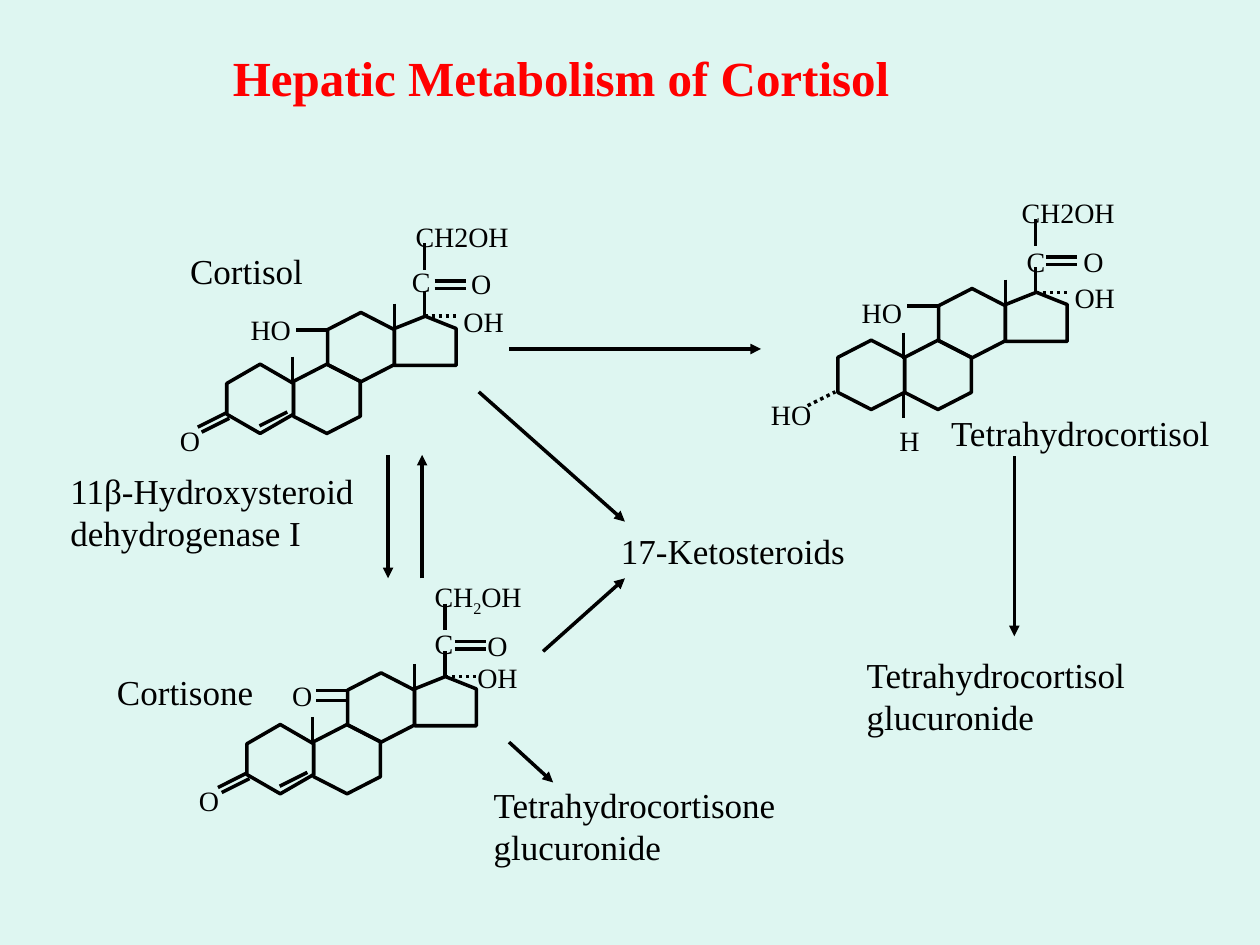
from dataclasses import dataclass

from lxml.etree import SubElement
from pptx import Presentation
from pptx.dml.color import RGBColor
from pptx.enum.dml import MSO_LINE
from pptx.enum.shapes import MSO_CONNECTOR, MSO_SHAPE
from pptx.enum.text import MSO_AUTO_SIZE
from pptx.oxml.ns import qn
from pptx.util import Cm, Pt


@dataclass(frozen=True)
class Theme:
    background: RGBColor = RGBColor(0xDE, 0xF6, 0xF1)
    title_color: RGBColor = RGBColor(0xFF, 0x00, 0x00)
    ink: RGBColor = RGBColor(0x00, 0x00, 0x00)
    font: str = "Times New Roman"
    title_size: int = 28
    name_size: int = 20
    atom_size: int = 16
    line_width: int = 2


def inch(value):
    return Cm(value * 2.54)


class Diagram:
    def __init__(self, slide, theme):
        self.s = slide
        self.theme = theme
        fill = slide.background.fill
        fill.solid()
        fill.fore_color.rgb = theme.background

    def text(self, paragraphs, x, y, w, h, size, color=None, bold=False, wrap=True):
        sp = self.s.shapes.add_textbox(inch(x), inch(y), inch(w), inch(h))
        tf = sp.text_frame
        tf.word_wrap = wrap
        tf.auto_size = MSO_AUTO_SIZE.SHAPE_TO_FIT_TEXT
        for i, runs in enumerate(paragraphs):
            p = tf.paragraphs[0] if i == 0 else tf.add_paragraph()
            for value, baseline in runs:
                r = p.add_run()
                r.text = value
                r.font.name = self.theme.font
                r.font.size = Pt(size)
                r.font.bold = bold
                r.font.color.rgb = color or self.theme.ink
                if baseline:
                    r.font._element.set("baseline", str(baseline))

    def title(self, value, x, y, w, h):
        self.text([[(value, 0)]], x, y, w, h, self.theme.title_size,
                  self.theme.title_color, True)

    def name(self, lines, x, y, w):
        h = 0.43 if w < 2.5 and len(lines) == 1 else 0.77
        self.text([[(line, 0)] for line in lines], x, y, w, h, self.theme.name_size)

    def atom(self, runs, x, y, w=0.25, wrap=True):
        self.text([runs], x, y, w, 0.37, self.theme.atom_size, wrap=wrap)

    def pen(self, sp):
        sp.line.color.rgb = self.theme.ink
        sp.line.width = Pt(self.theme.line_width)

    def line(self, x1, y1, x2, y2, dotted=False, arrow=False):
        sp = self.s.shapes.add_connector(MSO_CONNECTOR.STRAIGHT, inch(x1), inch(y1),
                                         inch(x2), inch(y2))
        self.pen(sp)
        if dotted:
            sp.line.dash_style = MSO_LINE.ROUND_DOT
        if arrow:
            SubElement(sp.line._get_or_add_ln(), qn("a:tailEnd"), type="triangle")
        SubElement(sp._element.spPr, qn("a:effectLst"))

    def ring(self, kind, x, y, w, h, adjust):
        sp = self.s.shapes.add_shape(kind, inch(x), inch(y), inch(w), inch(h))
        sp.rotation = 270
        sp.adjustments[0] = adjust
        sp.shadow.inherit = False
        sp.fill.background()
        self.pen(sp)

    def steroid(self, x, y, bonds, a_ring_adjust):
        for dx, dy, adjust in ((-0.78, -0.02, 0.257), (-1.05, 0.39, 0.257),
                               (-1.58, 0.39, a_ring_adjust)):
            self.ring(MSO_SHAPE.HEXAGON, x + dx, y + dy, 0.55, 0.53, adjust)
        self.ring(MSO_SHAPE.PENTAGON, x - 0.19, y - 0.05, 0.39, 0.49, 0.25)
        for x1, y1, x2, y2, dotted in CORE_BONDS + bonds:
            self.line(x + x1, y + y1, x + x2, y + y2, dotted)


CORE_BONDS = [
    (0, -0.58, 0, -0.37, False),
    (0, -0.2, 0, 0.01, False),
    (0, 0, 0.25, 0, True),
    (0.08, -0.28, 0.33, -0.28, False),
    (0.08, -0.22, 0.33, -0.22, False),
    (-0.24, -0.1, -0.24, 0.11, False),
    (-1.05, 0.32, -1.05, 0.53, False),
    (-1.02, 0.11, -0.77, 0.11, False),
]
ENONE_BONDS = [
    (-1.31, 0.87, -1.09, 0.76, False),
    (-1.8, 0.88, -1.58, 0.77, False),
    (-1.77, 0.92, -1.55, 0.81, False),
]
KETONE_BOND = [(-1.02, 0.19, -0.77, 0.19, False)]
REDUCED_BONDS = [
    (-1.81, 0.9, -1.59, 0.79, True),
    (-1.05, 0.79, -1.05, 1, False),
]
STEROIDS = [
    (3.37, 2.51, ENONE_BONDS, 0.289),
    (3.53, 5.37, ENONE_BONDS + KETONE_BOND, 0.289),
    (8.22, 2.32, REDUCED_BONDS, 0.257),
]
ATOMS = [
    ("O", 1.33, 3.31, 0.25), ("HO", 1.89, 2.43, 0.61), ("OH", 3.58, 2.37, 0.58),
    ("O", 3.64, 2.07, 0.25), ("C", 3.17, 2.05, 0.25), ("CH2OH", 3.2, 1.69, 1.19),
    ("O", 1.48, 6.17, 0.25), ("O", 2.22, 5.34, 0.61), ("OH", 3.69, 5.19, 0.58),
    ("O", 3.77, 4.94, 0.25), ("C", 3.35, 4.92, 0.25),
    ("HO", 6.02, 3.11, 0.61), ("HO", 6.74, 2.3, 0.61), ("H", 7.04, 3.31, 0.25),
    ("OH", 8.43, 2.18, 0.58), ("O", 8.5, 1.89, 0.25), ("C", 8.05, 1.89, 0.25),
]
NAMES = [
    (["Cortisol"], 1.41, 1.93, 1.45),
    (["Cortisone"], 0.83, 5.27, 1.45),
    (["17-Ketosteroids"], 4.83, 4.15, 2.28),
    (["Tetrahydrocortisol"], 7.45, 3.22, 2.47),
    (["Tetrahydrocortisone glucuronide"], 3.82, 6.17, 3.56),
    (["11β-Hydroxysteroid dehydrogenase I"], 0.46, 3.68, 2.79),
    (["Tetrahydrocortisol", "glucuronide"], 6.78, 5.14, 2.47),
]
REACTIONS = [
    (4.04, 2.77, 6.04, 2.77),
    (3.08, 3.61, 3.08, 4.59),
    (3.35, 4.59, 3.35, 3.61),
    (3.8, 3.11, 4.96, 4.14),
    (4.31, 5.17, 4.96, 4.59),
    (4.04, 5.89, 4.39, 6.21),
    (8.05, 3.62, 8.05, 5.05),
]


def main():
    prs = Presentation()
    prs.slide_width, prs.slide_height = inch(10), inch(7.5)
    d = Diagram(prs.slides.add_slide(prs.slide_layouts[6]), Theme())
    d.title("Hepatic Metabolism of Cortisol", 1.75, 0.33, 6.48, 0.57)
    for steroid in STEROIDS:
        d.steroid(*steroid)
    for symbol, x, y, w in ATOMS:
        d.atom([(symbol, 0)], x, y, w)
    d.atom([("CH", 0), ("2", -25000), ("OH", 0)], 3.35, 4.55, 1.19)
    d.atom([("CH2OH", 0)], 8.01, 1.5, 0.95, wrap=False)
    for name in NAMES:
        d.name(*name)
    for reaction in REACTIONS:
        d.line(*reaction, arrow=True)
    prs.save("out.pptx")


if __name__ == "__main__":
    main()
